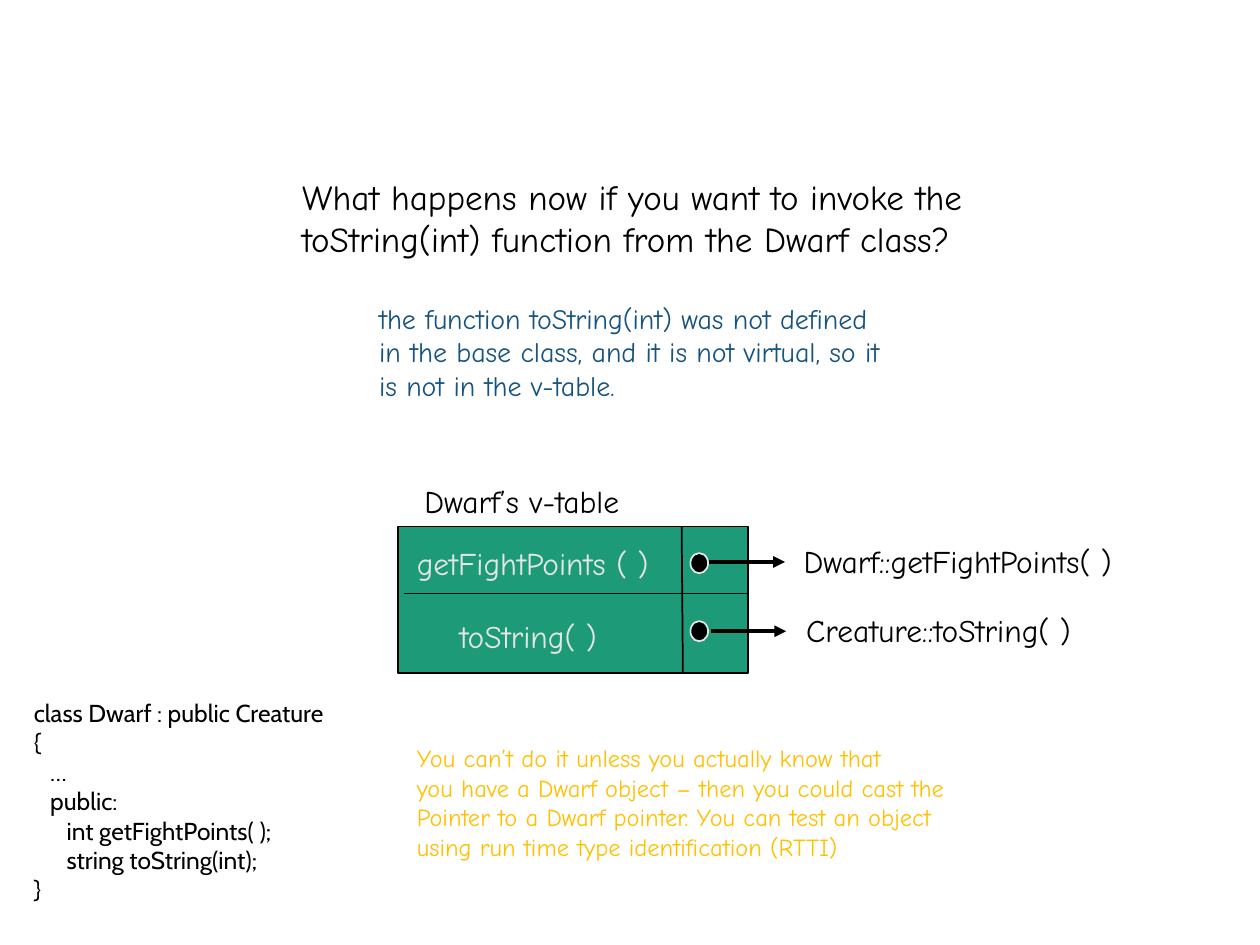
from dataclasses import dataclass

from lxml import etree
from pptx import Presentation
from pptx.dml.color import RGBColor
from pptx.enum.shapes import MSO_CONNECTOR, MSO_SHAPE
from pptx.enum.text import MSO_AUTO_SIZE
from pptx.oxml.ns import qn
from pptx.util import Inches, Pt

RECT, OVAL = MSO_SHAPE.RECTANGLE, MSO_SHAPE.OVAL
STRAIGHT = MSO_CONNECTOR.STRAIGHT
FIT = MSO_AUTO_SIZE.SHAPE_TO_FIT_TEXT

BLACK = RGBColor(0x00, 0x00, 0x00)
BLUE = RGBColor(0x16, 0x53, 0x7F)
GOLD = RGBColor(0xFF, 0xC0, 0x00)
GREEN = RGBColor(0x1D, 0x9A, 0x78)
PALE = RGBColor(0xE7, 0xE6, 0xE6)

COMIC, CABIN = "Comic Neue", "Cabin"
INDENT = 0.13  # one code level, in inches


@dataclass
class Note:
    lines: list[str]
    box: tuple[float, float, float, float]
    size: int
    color: RGBColor = BLACK
    font: str = COMIC
    levels: tuple[int, ...] = ()


@dataclass
class Entry:
    name: Note
    target: Note
    dot: float  # top of the dot
    start: float  # left end of the arrow
    y: float  # height of the arrow


NOTES = [
    Note(["What happens now if you want to invoke the",
          "toString(int) function from the Dwarf class?"],
         (2.3, 1.34, 6.05, 0.77), 20),
    Note(["the function toString(int) was not defined",
          "in the base class, and it is not virtual, so it",
          "is not in the v-table."],
         (2.91, 2.34, 4.69, 0.91), 16, BLUE),
    Note(["You can’t do it unless you actually know that",
          "you have a Dwarf object – then you could cast the",
          "Pointer to a Dwarf pointer. You can test an object",
          "using run time type identification (RTTI)"],
         (3.21, 5.85, 4.78, 1.04), 14, GOLD),
    Note(["class Dwarf : public Creature", "{", "…", "public:",
          "int getFightPoints( );", "string toString(int);", "}"],
         (0.17, 5.49, 2.69, 1.75), 14, font=CABIN,
         levels=(0, 0, 1, 1, 2, 2, 0)),
    Note(["Dwarf’s v-table"], (3.27, 3.78, 2.01, 0.4), 18),
]

ENTRIES = [
    Entry(Note(["getFightPoints ( )"], (3.21, 4.27, 2.26, 0.4), 18, PALE),
          Note(["Dwarf::getFightPoints( )"], (6.28, 4.25, 3.07, 0.4), 18),
          4.39, 5.63, 4.46),
    Entry(Note(["toString( )"], (3.55, 4.85, 1.47, 0.4), 18, PALE),
          Note(["Creature::toString( )"], (6.3, 4.8, 2.67, 0.4), 18),
          4.93, 5.64, 5.01),
]


def add_note(slide, note: Note) -> None:
    frame = slide.shapes.add_textbox(*map(Inches, note.box)).text_frame
    frame.word_wrap = False
    frame.auto_size = FIT
    frame.text = "\n".join(note.lines)
    for para in frame.paragraphs:
        font = para.runs[0].font
        font.name, font.size = note.font, Pt(note.size)
        font.color.rgb = note.color
    for para, level in zip(frame.paragraphs, note.levels):
        para._p.get_or_add_pPr().set("marL", str(Inches(level * INDENT)))


def add_block(slide, kind, box: tuple, fill: RGBColor, edge: RGBColor) -> None:
    shape = slide.shapes.add_shape(kind, *map(Inches, box))
    shape.shadow.inherit = False
    shape.fill.solid()
    shape.fill.fore_color.rgb = fill
    shape.line.color.rgb = edge
    shape.line.width = Pt(1)


def add_line(slide, ends: tuple, width: float = 1, arrow: bool = False) -> None:
    link = slide.shapes.add_connector(STRAIGHT, *map(Inches, ends))
    link.line.color.rgb = BLACK
    link.line.width = Pt(width)
    props = link._element.spPr
    if arrow:
        etree.SubElement(props.find(qn("a:ln")), qn("a:tailEnd"), type="triangle")
    etree.SubElement(props, qn("a:effectLst"))


def main() -> None:
    deck = Presentation()
    deck.slide_width, deck.slide_height = Inches(10), Inches(7.5)
    slide = deck.slides.add_slide(deck.slide_layouts[6])

    # Question, answers, code and table heading
    for note in NOTES:
        add_note(slide, note)

    # Table body with its dividers
    add_block(slide, RECT, (3.16, 4.18, 2.78, 1.16), GREEN, BLACK)
    add_line(slide, (3.21, 4.71, 5.93, 4.71))
    add_line(slide, (5.41, 4.18, 5.42, 5.34))

    # Entries: name, pointer and target
    for entry in ENTRIES:
        add_note(slide, entry.name)
        add_line(slide, (entry.start, entry.y, entry.start + 0.6, entry.y),
                 2.25, arrow=True)
        add_block(slide, OVAL, (5.48, entry.dot, 0.14, 0.16), BLACK, PALE)
        add_note(slide, entry.target)

    deck.save("out.pptx")


if __name__ == "__main__":
    main()
